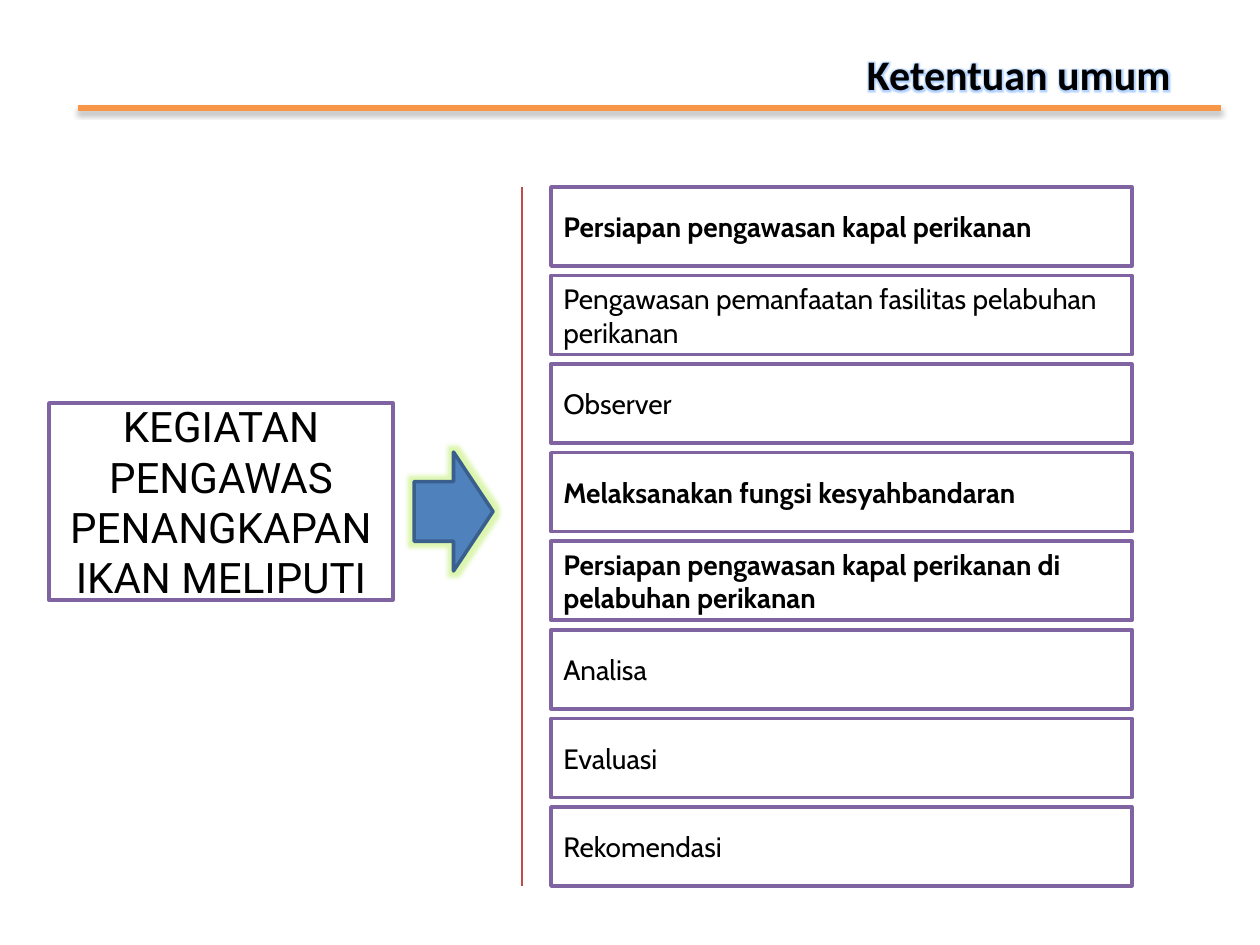
from lxml import etree
from pptx import Presentation
from pptx import util as u
from pptx.dml.color import RGBColor
from pptx.enum import shapes, text
from pptx.oxml import ns

PX = 914400 // 126
BLACK = RGBColor(0x00, 0x00, 0x00)
WHITE = RGBColor(0xFF, 0xFF, 0xFF)
PURPLE = RGBColor(0x80, 0x64, 0xA2)
ORANGE = RGBColor(0xF7, 0x96, 0x46)
RED = RGBColor(0xBF, 0x4C, 0x48)
BLUE = RGBColor(0x4F, 0x81, 0xBD)
NAVY = RGBColor(0x3A, 0x5F, 0x8C)
SKY = RGBColor(0x80, 0xB5, 0xFF)
LIME = RGBColor(0xC5, 0xF0, 0x7A)

ACTIVITIES = [
    ("Persiapan pengawasan kapal perikanan", True),
    ("Pengawasan pemanfaatan fasilitas pelabuhan perikanan", False),
    ("Observer", False),
    ("Melaksanakan fungsi kesyahbandaran", True),
    ("Persiapan pengawasan kapal perikanan di pelabuhan perikanan", True),
    ("Analisa", False),
    ("Evaluasi", False),
    ("Rekomendasi", False),
]


def emu(*lengths):
    """Turn lengths in px into EMU."""
    return [u.Emu(round(n * PX)) for n in lengths]


def effects(kind=None, color=BLACK, alpha=100, **attrs):
    """Return an effect list, empty unless a kind of effect is named."""
    lst = etree.Element(ns.qn("a:effectLst"))
    if kind:
        effect = etree.SubElement(lst, ns.qn("a:" + kind),
                                  {k: str(v) for k, v in attrs.items()})
        clr = etree.SubElement(effect, ns.qn("a:srgbClr"), val=str(color))
        etree.SubElement(clr, ns.qn("a:alpha"), val=str(alpha * 1000))
    return lst


def write(sp, words, align, **fmt):
    """Put one formatted run, vertically centred, in a shape."""
    tf = sp.text_frame
    tf.word_wrap = True
    tf.vertical_anchor = text.MSO_ANCHOR.MIDDLE
    p = tf.paragraphs[0]
    p.alignment = align
    r = p.add_run()
    r.text = words
    r.font.color.rgb = BLACK
    for name, value in fmt.items():
        setattr(r.font, name, value)
    return r


def draw(parent, kind, box, fill, line):
    """Add a preset shape with a 2 pt outline."""
    sp = parent.shapes.add_shape(kind, *emu(*box))
    sp.fill.solid()
    sp.fill.fore_color.rgb = fill
    sp.line.color.rgb = line
    sp.line.width = u.Pt(2)
    return sp


def panel(parent, box, words, align, **fmt):
    """Add a white panel with a purple outline and text."""
    sp = draw(parent, shapes.MSO_SHAPE.RECTANGLE, box, WHITE, PURPLE)
    sp.shadow.inherit = False
    write(sp, words, align, **fmt)


def rule(s, ends, color, width, effect):
    """Add a straight line with the given effect list."""
    c = s.shapes.add_connector(shapes.MSO_CONNECTOR.STRAIGHT, *emu(*ends))
    c.line.color.rgb = color
    c.line.width = u.Pt(width)
    c._element.spPr.append(effect)


def header(s, x, y, w, h):
    """Place the glowing title and the shadowed rule below it."""
    sp = s.shapes.add_textbox(*emu(x + 217, y, w - 255, h))
    r = write(sp, "Ketentuan umum", text.PP_ALIGN.RIGHT,
              name="Calibri", size=u.Pt(24), bold=True)
    fill = r._r.get_or_add_rPr().find(ns.qn("a:solidFill"))
    fill.addnext(effects("glow", SKY, 60, rad=u.Pt(5)))
    shadow = effects("outerShdw", BLACK, 35, blurRad=u.Pt(3.1),
                     dist=u.Pt(1.8), dir=5400000, rotWithShape=0)
    rule(s, (x, y + 108, x + w, y + 108), ORANGE, 3, shadow)


def topic(s, x, y, w, h):
    """Place the topic panel and the arrow leading to the list."""
    panel(s, (x, y, 344, h), "KEGIATAN PENGAWAS PENANGKAPAN IKAN MELIPUTI",
          text.PP_ALIGN.CENTER, name="Roboto", size=u.Pt(24))
    arrow = draw(s, shapes.MSO_SHAPE.RIGHT_ARROW,
                 (x + w - 79, y + 49, 79, 119), BLUE, NAVY)
    arrow._element.spPr.append(effects("glow", LIME, 60, rad=u.Pt(5)))


def activities(s, x, y, w, h):
    """Place the dividing line and the evenly spaced activity panels."""
    row = 79
    pitch = (h - row) / (len(ACTIVITIES) - 1)
    grp = s.shapes.add_group_shape()
    for i, (words, bold) in enumerate(ACTIVITIES):
        panel(grp, (x + 29, y + i * pitch, w - 29, row), words,
              text.PP_ALIGN.LEFT, name="Cabin", size=u.Pt(16), bold=bold)
    rule(s, (x, y, x, y + h), RED, 0.75, effects())


def main():
    """Build the slide and save it."""
    prs = Presentation()
    prs.slide_width, prs.slide_height = u.Inches(10), u.Inches(7.5)
    s = prs.slides.add_slide(prs.slide_layouts[6])
    header(s, 78, 0, 1143, 147)
    topic(s, 49, 403, 444, 197)
    activities(s, 522, 187, 610, 699)
    prs.save("out.pptx")


if __name__ == "__main__":
    main()
